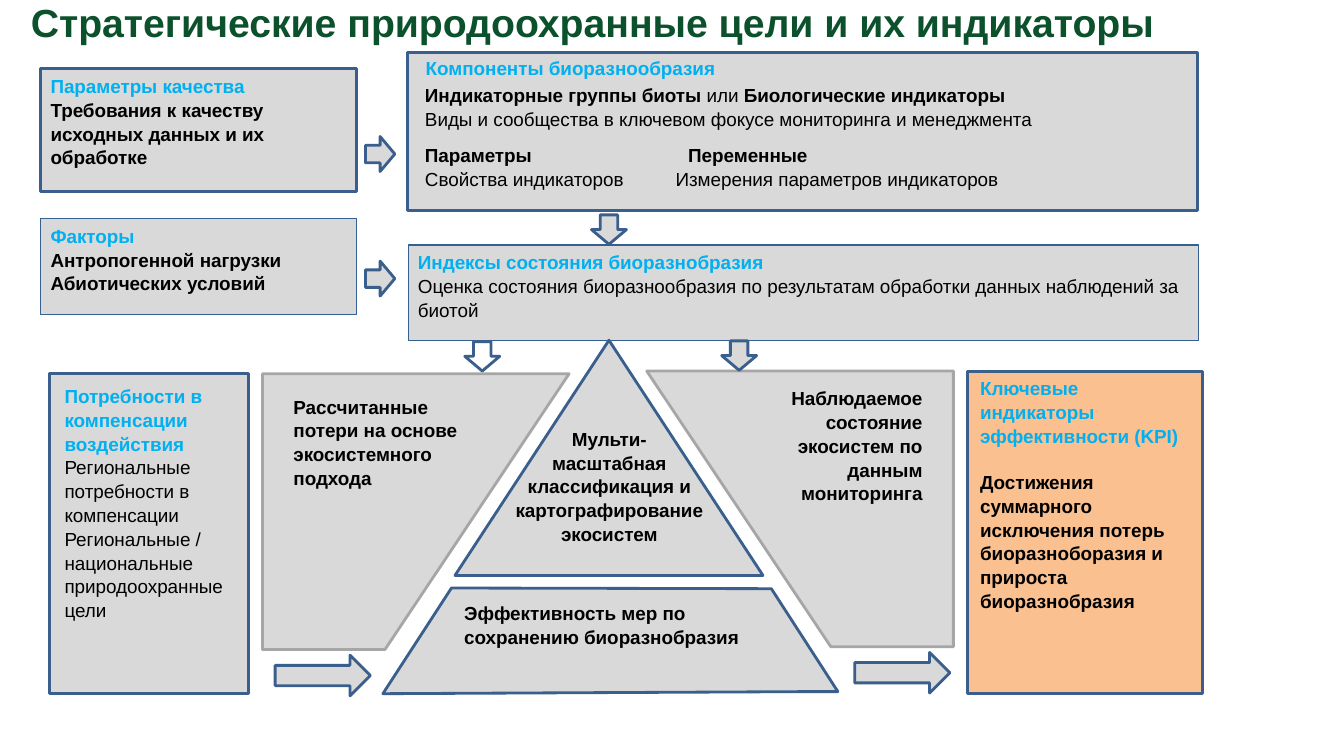
from pptx import Presentation
from pptx.dml.color import RGBColor
from pptx.enum.shapes import MSO_SHAPE
from pptx.enum.text import MSO_ANCHOR, PP_ALIGN
from pptx.oxml.ns import qn
from pptx.util import Pt
from lxml import etree

RECT, PEAK, ARROW = MSO_SHAPE.RECTANGLE, MSO_SHAPE.ISOSCELES_TRIANGLE, MSO_SHAPE.DOWN_ARROW
LEFT, MID, RIGHT = PP_ALIGN.LEFT, PP_ALIGN.CENTER, PP_ALIGN.RIGHT
TOP = MSO_ANCHOR.TOP

GREEN = RGBColor(0x0B, 0x51, 0x2B)
CYAN = RGBColor(0x00, 0xB0, 0xF0)
BLACK = RGBColor(0x00, 0x00, 0x00)
WHITE = RGBColor(0xFF, 0xFF, 0xFF)
GREY = RGBColor(0xD9, 0xD9, 0xD9)
PEACH = RGBColor(0xFA, 0xC0, 0x90)
NAVY = RGBColor(0x3A, 0x5F, 0x8C)
BLUE = RGBColor(0x37, 0x60, 0x92)
SILVER = RGBColor(0xA6, 0xA6, 0xA6)

HEAD = dict(color=CYAN)
BOLD = dict()
PLAIN = dict(bold=False)


def write(para, text, size=13.5, color=BLACK, bold=True, align=LEFT,
          before=0, pitch=1.05, tab=None):
    """Fill a paragraph; each | in the text switches bold on or off."""
    para.alignment = align
    para.line_spacing = pitch
    if before:
        para.space_before = Pt(before)
    if tab:
        stops = etree.SubElement(para._p.get_or_add_pPr(), qn("a:tabLst"))
        etree.SubElement(stops, qn("a:tab"), pos=str(Pt(tab)), algn="l")
    for part in text.split("|"):
        run = para.add_run()
        run.text = part
        font = run.font
        font.name, font.size, font.bold = "Arial", Pt(size), bold
        font.color.rgb = color
        bold = not bold


class Board:
    def __init__(self, slide):
        self.shapes = slide.shapes

    def fill(self, frame, lines):
        frame.word_wrap = True
        frame.vertical_anchor = TOP
        for i, (text, form) in enumerate(lines):
            para = frame.add_paragraph() if i else frame.paragraphs[0]
            write(para, text, **form)

    def paint(self, shape, fill, line, width):
        shape.shadow.inherit = False
        shape.fill.solid()
        shape.fill.fore_color.rgb = fill
        shape.line.color.rgb = line
        shape.line.width = Pt(width)

    def label(self, x, y, w, h, *lines):
        box = self.shapes.add_textbox(Pt(x), Pt(y), Pt(w), Pt(h))
        self.fill(box.text_frame, lines)

    def block(self, x, y, w, h, *lines, kind=RECT, fill=GREY, line=NAVY, width=2):
        shape = self.shapes.add_shape(kind, Pt(x), Pt(y), Pt(w), Pt(h))
        self.paint(shape, fill, line, width)
        self.fill(shape.text_frame, lines)
        return shape

    def arrow(self, x, y, w=25, h=21, turn=0, fill=GREY):
        self.block(x, y, w, h, kind=ARROW, fill=fill).rotation = turn

    def outline(self, points, line=NAVY):
        start, *rest = [(Pt(x), Pt(y)) for x, y in points]
        path = self.shapes.build_freeform(*start, scale=1.0)
        path.add_line_segments(rest, close=True)
        self.paint(path.convert_to_shape(), GREY, line, 2)

    def wing(self, x, y, side):
        """Side panel: x, y is its inner tip, side is -1 (left) or 1 (right)."""
        far, low = x + 219 * side, y + 197
        self.outline([(x, y), (x + 131.5 * side, low), (far, low), (far, y)], SILVER)


def main():
    deck = Presentation()
    deck.slide_width, deck.slide_height = Pt(960), Pt(540)
    board = Board(deck.slides.add_slide(deck.slide_layouts[6]))

    # Title
    board.label(15, -5, 897, 41, ("Стратегические природоохранные цели и их индикаторы",
                                  dict(size=28, color=GREEN, pitch=1)))

    # Inputs on the left
    board.block(29, 49, 225.5, 88, ("Параметры качества", HEAD),
                ("Требования к качеству исходных данных и их обработке", BOLD))
    board.block(29, 156, 225.5, 68.5, ("Факторы", HEAD), ("Антропогенной нагрузки", BOLD),
                ("Абиотических условий", BOLD), line=BLUE, width=0.75)

    # Components of biodiversity
    board.block(291, 37.5, 564.5, 113)
    board.label(297, 36, 272, 29, ("Компоненты биоразнообразия", HEAD))
    board.label(296.5, 55.5, 543, 44,
                ("Индикаторные группы биоты| или |Биологические индикаторы", BOLD),
                ("Виды и сообщества в ключевом фокусе мониторинга и менеджмента", PLAIN))
    board.label(296.5, 98.5, 543, 48,
                ("Параметры\tПеременные", dict(tab=188)),
                ("Свойства индикаторов\tИзмерения параметров индикаторов",
                 dict(bold=False, tab=179)))

    # State indices
    board.block(291.5, 175, 564.5, 68.5, ("Индексы состояния биоразнобразия", HEAD),
                ("Оценка состояния биоразнообразия по результатам обработки "
                 "данных наблюдений за биотой", PLAIN), line=BLUE, width=0.75)

    # Pyramid with its base and wings
    board.block(325, 243, 220, 168, kind=PEAK)
    board.label(355, 301, 160.5, 108, ("Мульти-", dict(align=MID)),
                ("масштабная классификация и картографирование экосистем", dict(align=MID)))
    board.outline([(322.5, 420), (551, 420.5), (598.5, 494), (579.5, 494), (273.5, 495.5)])
    board.label(324.5, 425.5, 227, 68.5, ("Эффективность мер по", BOLD),
                ("сохранению биоразнобразия", BOLD))
    board.wing(406.5, 267, -1)
    board.label(202.5, 278, 142, 108,
                ("Рассчитанные потери на основе экосистемного подхода", BOLD))
    board.wing(462, 265, 1)
    board.label(524, 272, 142, 108, ("Наблюдаемое", dict(align=RIGHT)),
                ("состояние экосистем по данным мониторинга", dict(align=RIGHT)))

    # Needs and key indicators
    board.block(35.5, 267, 142, 228.5)
    board.label(39, 270.5, 140.5, 206.5, ("Потребности в компенсации воздействия", HEAD),
                ("Региональные потребности в компенсации", PLAIN),
                ("Региональные / национальные природоохранные цели", PLAIN))
    board.block(691, 265.5, 168, 230, fill=PEACH)
    board.label(693, 265, 163, 246, ("Ключевые индикаторы эффективности (KPI)", HEAD),
                ("Достижения суммарного исключения потерь биоразноборазия "
                 "и прироста биоразнобразия", dict(before=16)))

    # Arrows
    board.arrow(422.5, 153.5)
    board.arrow(332, 244, fill=WHITE)
    board.arrow(515.5, 243.5)
    for y in (99.5, 188.5):
        board.arrow(259, y, turn=270)
    for x, y in ((216, 448.5), (630, 446.5)):
        board.arrow(x, y, 29, 68, turn=270)

    deck.save("out.pptx")


if __name__ == "__main__":
    main()
